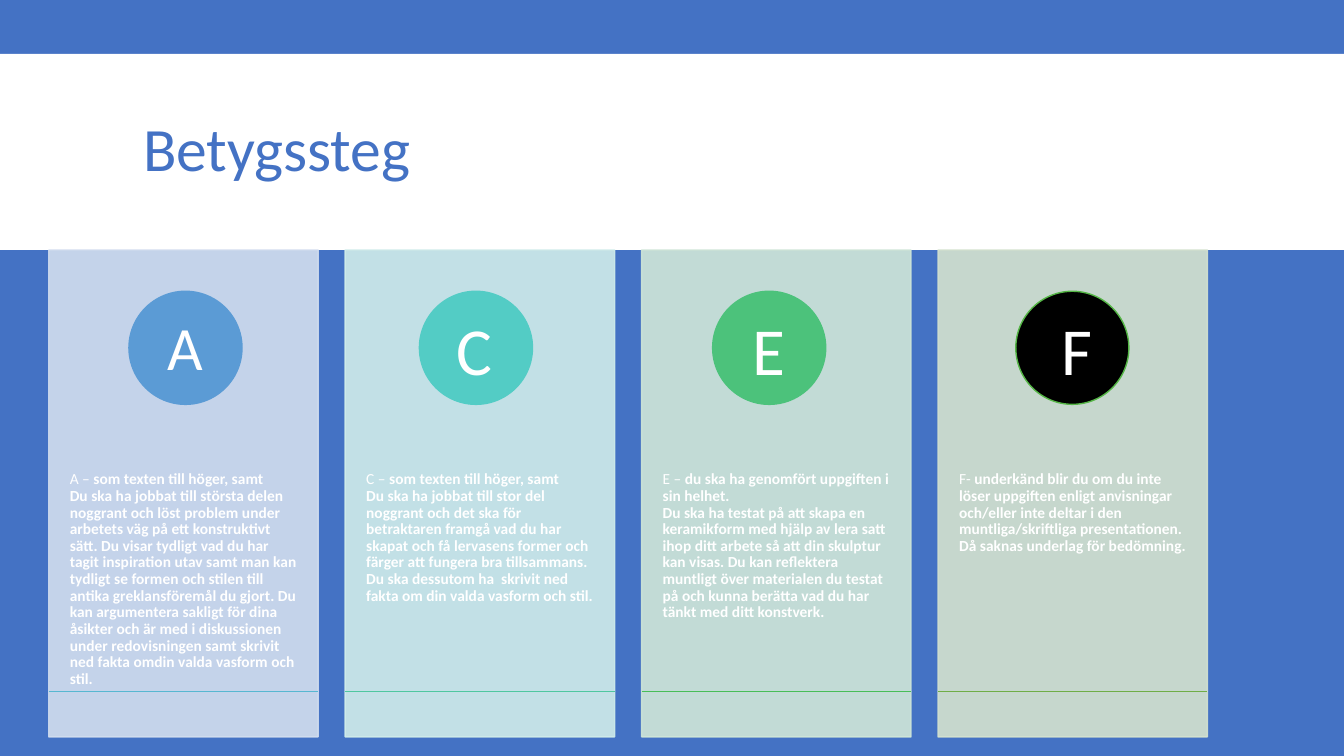
from lxml.etree import SubElement
from pptx import Presentation
from pptx.dml.color import RGBColor
from pptx.enum.shapes import MSO_CONNECTOR as Connector, MSO_SHAPE as Shape
from pptx.enum.text import MSO_ANCHOR as Anchor, PP_ALIGN as Align
from pptx.oxml.ns import qn
from pptx.util import Cm, Pt

FONT = "Calibri"
COLORS = {"blue": "4472C4", "white": "FFFFFF"}
TITLE = "Betygssteg"

GRADES = [
    {
        "letter": "A", "size": 44, "lead": "A – ",
        "lines": [
            "som texten till höger, samt",
            "Du ska ha jobbat till största delen noggrant och löst problem under arbetets väg "
            "på ett konstruktivt sätt. Du visar tydligt vad du har tagit inspiration utav samt "
            "man kan tydligt se formen och stilen till antika greklansföremål du gjort. Du "
            "kan argumentera sakligt för dina åsikter och är med i diskussionen under "
            "redovisningen samt skrivit ned fakta omdin valda vasform och stil.",
        ],
        "card": "D2DEEF", "circle": "5B9BD5", "ring": "5B9BD5", "rule": "57B7D1",
        "circle_left": 3.25, "letter_box": (3.96, 2.69),
    },
    {
        "letter": "C", "size": 48, "lead": "C – ",
        "lines": [
            "som texten till höger, samt",
            "Du ska ha jobbat till stor del noggrant och det ska för betraktaren framgå vad du "
            "har skapat och få lervasens former och färger att fungera bra tillsammans. "
            "Du ska dessutom ha  skrivit ned fakta om din valda vasform och stil.",
        ],
        "card": "D0ECEA", "circle": "53CCC5", "ring": "53CCC5", "rule": "4FC7A0",
        "circle_left": 10.57, "letter_box": (11.25, 1.45),
    },
    {
        "letter": "E", "size": 48, "lead": "E – ",
        "lines": [
            "du ska ha genomfört uppgiften i sin helhet.",
            "Du ska ha testat på att skapa en keramikform med hjälp av lera satt ihop ditt "
            "arbete så att din skulptur kan visas. Du kan reflektera muntligt över materialen "
            "du testat på och kunna berätta vad du har tänkt med ditt konstverk.",
        ],
        "card": "D0E7D8", "circle": "4CC27B", "ring": "4CC27B", "rule": "48BD58",
        "circle_left": 17.96, "letter_box": (18.72, 1.8),
    },
    {
        "letter": "F", "size": 48, "lead": "F- ",
        "lines": [
            "underkänd blir du om du inte löser uppgiften enligt anvisningar och/eller inte "
            "deltar i den muntliga/skriftliga presentationen. Då saknas underlag för bedömning.",
        ],
        "card": "D5E3CF", "circle": "000000", "ring": "55B646", "rule": "70AD47",
        "circle_left": 25.6, "letter_box": (26.49, 2.24),
    },
]

SLIDE_WIDTH, SLIDE_HEIGHT = 33.87, 19.05
CARD_LEFT, CARD_TOP, CARD_WIDTH, CARD_HEIGHT = 1.23, 6.3, 6.79, 12.27
CARD_PITCH = 7.47
TEXT_TOP, TEXT_HEIGHT = 10.97, 7.37
CIRCLE_TOP, CIRCLE_SIZE = 7.34, 2.85
RULE_TOP = 17.42
LETTER_TOP, LETTER_HEIGHT = 7.65, 2.3


def rgb(value):
    return RGBColor.from_string(value)


def style_font(paragraph, size, color):
    paragraph.font.name = FONT
    paragraph.font.size = Pt(size)
    paragraph.font.color.rgb = rgb(color)


def add_filled(slide, kind, box, fill, line=None, opacity=None):
    shape = slide.shapes.add_shape(kind, *map(Cm, box))
    shape.shadow.inherit = False
    shape.fill.solid()
    shape.fill.fore_color.rgb = rgb(fill)
    if line:
        shape.line.color.rgb = rgb(line)
        shape.line.width = Pt(1)
    else:
        shape.line.fill.background()
    if opacity:
        for color in shape.element.spPr.iter(qn("a:srgbClr")):
            SubElement(color, qn("a:alpha"), val=str(opacity * 1000))
    return shape


def add_rule(slide, left, color):
    rule = slide.shapes.add_connector(
        Connector.STRAIGHT, Cm(left), Cm(RULE_TOP), Cm(left + CARD_WIDTH), Cm(RULE_TOP))
    rule.line.color.rgb = rgb(color)
    rule.line.width = Pt(1)
    SubElement(rule.element.spPr, qn("a:effectLst"))


def add_description(slide, left, grade):
    box = slide.shapes.add_textbox(Cm(left), Cm(TEXT_TOP), Cm(CARD_WIDTH), Cm(TEXT_HEIGHT))
    frame = box.text_frame
    frame.word_wrap = True
    frame.margin_left = frame.margin_right = Cm(0.53)
    frame.margin_top = frame.margin_bottom = Cm(0.91)
    paragraph = frame.paragraphs[0]
    paragraph.line_spacing = 0.9
    style_font(paragraph, 11, COLORS["white"])
    paragraph.add_run().text = grade["lead"]
    for index, line in enumerate(grade["lines"]):
        if index:
            paragraph.add_line_break()
        run = paragraph.add_run()
        run.text = line
        run.font.bold = True


def add_letter(slide, grade):
    left, width = grade["letter_box"]
    box = slide.shapes.add_textbox(Cm(left), Cm(LETTER_TOP), Cm(width), Cm(LETTER_HEIGHT))
    box.text_frame.word_wrap = True
    paragraph = box.text_frame.paragraphs[0]
    paragraph.text = grade["letter"]
    style_font(paragraph, grade["size"], COLORS["white"])


def add_title(slide):
    title = slide.shapes.title
    title.left, title.top, title.width, title.height = map(Cm, (3.35, 2.11, 28.19, 3.43))
    title.text_frame.vertical_anchor = Anchor.MIDDLE
    paragraph = title.text_frame.paragraphs[0]
    paragraph.text = TITLE
    paragraph.alignment = Align.LEFT
    paragraph.line_spacing = 0.9
    style_font(paragraph, 44, COLORS["blue"])
    band = add_filled(slide, Shape.RECTANGLE, (0, 1.36, SLIDE_WIDTH, 4.94), COLORS["white"])
    title.element.addprevious(band.element)


def main():
    presentation = Presentation()
    presentation.slide_width = Cm(SLIDE_WIDTH)
    presentation.slide_height = Cm(SLIDE_HEIGHT)
    slide = presentation.slides.add_slide(presentation.slide_layouts.get_by_name("Title Only"))
    slide.background.fill.solid()
    slide.background.fill.fore_color.rgb = rgb(COLORS["blue"])
    add_title(slide)
    for index, grade in enumerate(GRADES):
        left = CARD_LEFT + index * CARD_PITCH
        card = (left, CARD_TOP, CARD_WIDTH, CARD_HEIGHT)
        circle = (grade["circle_left"], CIRCLE_TOP, CIRCLE_SIZE, CIRCLE_SIZE)
        add_filled(slide, Shape.RECTANGLE, card, grade["card"], grade["card"], opacity=90)
        add_description(slide, left, grade)
        add_filled(slide, Shape.OVAL, circle, grade["circle"], grade["ring"])
        add_rule(slide, left, grade["rule"])
        add_letter(slide, grade)
    presentation.save("out.pptx")


if __name__ == "__main__":
    main()
